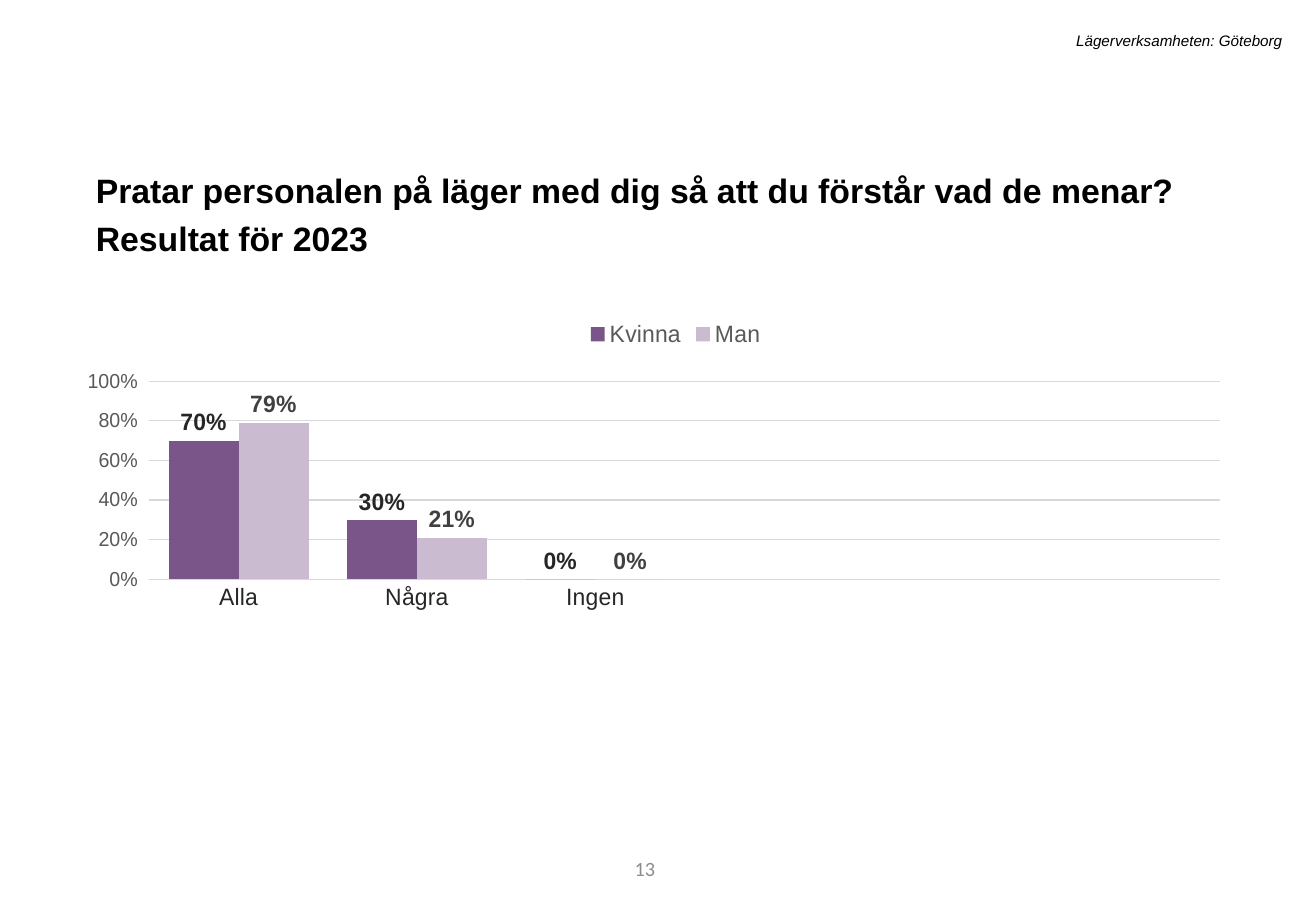
"""Build a survey result slide with a clustered column chart."""
from lxml.etree import SubElement
from pptx import Presentation
from pptx.chart.data import CategoryChartData
from pptx.dml.color import RGBColor
from pptx.enum.chart import XL_CHART_TYPE as CT, XL_LABEL_POSITION as LP
from pptx.enum.chart import XL_LEGEND_POSITION as LEG, XL_TICK_MARK as TM
from pptx.enum.text import MSO_ANCHOR as VA, PP_ALIGN as AL
from pptx.oxml.ns import qn
from pptx.util import Inches, Pt

BLACK = RGBColor(0x00, 0x00, 0x00)
INK = RGBColor(0x26, 0x26, 0x26)
CHARCOAL = RGBColor(0x40, 0x40, 0x40)
SLATE = RGBColor(0x59, 0x59, 0x59)
GREY = RGBColor(0x8C, 0x8C, 0x8C)
GRID = RGBColor(0xD9, 0xD9, 0xD9)
PURPLE = RGBColor(0x7A, 0x55, 0x89)
LILAC = RGBColor(0xCA, 0xBB, 0xD0)

TEXTS = [
    ("13", (28.16, 92.67, 22.53, 5.33),
     {"name": "Calibri", "size": Pt(12), "color": GREY},
     {"alignment": AL.RIGHT}, VA.MIDDLE),
    ("Pratar personalen på läger med dig så att du förstår vad de menar? "
     "Resultat för 2023", (6.37, 17.07, 86.8, 6.27),
     {"size": Pt(20), "bold": True},
     {"line_spacing": 1.2, "space_before": Pt(10)}, VA.TOP),
    ("Lägerverksamheten: Göteborg", (16.53, 2.8, 81.81, 3.33),
     {"size": Pt(9), "italic": True}, {"alignment": AL.RIGHT}, VA.TOP),
]
CATEGORIES = ["Alla", "Några", "Ingen", "", "", ""]
SERIES = [
    ("Kvinna", [0.7, 0.3, 0, None, None, None], PURPLE, INK),
    ("Man", [0.79, 0.21, 0, None, None, None], LILAC, CHARCOAL),
]
CHART_BOX = (6.65, 33.73, 86.8, 52.67)
PLOT_BOX = {"x": 2.5, "y": 15.4, "w": 96.6, "h": 41.3}


def apply(obj, values):
    """Set every attribute named in a dict."""
    for key, value in values.items():
        setattr(obj, key, value)


def set_font(font, color=BLACK, name="Arial", **values):
    """Format a font."""
    apply(font, {"name": name, **values})
    font.color.rgb = color


def place(prs, box):
    """Turn percentages of the slide into lengths."""
    sides = (prs.slide_width, prs.slide_height) * 2
    return [round(side * share / 100) for side, share in zip(sides, box)]


def add_text(prs, s, text, box, font, para, anchor):
    """Add a wrapped text box."""
    tf = s.shapes.add_textbox(*place(prs, box)).text_frame
    apply(tf, {"word_wrap": True, "vertical_anchor": anchor})
    p = tf.paragraphs[0]
    apply(p, para)
    r = p.add_run()
    r.text = text
    set_font(r.font, **font)


def set_plot_box(chart):
    """Fix the inner plot area as shares of the chart."""
    area = chart.plots[0]._element.getparent()
    for old in area.findall(qn("c:layout")):
        area.remove(old)
    layout = SubElement(area, qn("c:layout"))
    area.insert(0, layout)
    manual = SubElement(layout, qn("c:manualLayout"))
    values = {"layoutTarget": "inner", "xMode": "edge", "yMode": "edge",
              **{key: f"{share / 100:.3f}" for key, share in PLOT_BOX.items()}}
    for tag, value in values.items():
        SubElement(manual, qn(f"c:{tag}")).set("val", value)


def add_result_chart(prs, s):
    """Add the column chart of answers by gender."""
    data = CategoryChartData(number_format="0%")
    data.categories = CATEGORIES
    for name, values, *_ in SERIES:
        data.add_series(name, values)
    chart = s.shapes.add_chart(CT.COLUMN_CLUSTERED, *place(prs, CHART_BOX), data).chart
    apply(chart, {"has_title": False, "has_legend": True})
    set_font(chart.font, size=Pt(10))
    apply(chart.legend, {"position": LEG.TOP, "include_in_layout": False})
    set_font(chart.legend.font, SLATE, size=Pt(14))

    cat, val = chart.category_axis, chart.value_axis
    apply(cat, {"major_tick_mark": TM.NONE, "minor_tick_mark": TM.NONE})
    apply(val, {"minimum_scale": 0, "maximum_scale": 1, "major_unit": 0.2,
                "major_tick_mark": TM.OUTSIDE, "has_major_gridlines": True})
    set_font(cat.tick_labels.font, INK, size=Pt(14))
    set_font(val.tick_labels.font, SLATE, size=Pt(12))
    apply(val.tick_labels, {"number_format": "0%", "number_format_is_linked": False})
    for line in (cat.format.line, val.major_gridlines.format.line):
        line.color.rgb = GRID
        line.width = Pt(0.75)
    val.format.line.fill.background()

    plot = chart.plots[0]
    apply(plot, {"gap_width": 55, "overlap": 0, "vary_by_categories": False})
    for series, (*_, fill, ink) in zip(plot.series, SERIES):
        series.format.fill.solid()
        series.format.fill.fore_color.rgb = fill
        labels = series.data_labels
        apply(labels, {"show_value": True, "position": LP.OUTSIDE_END,
                       "number_format": "0%", "number_format_is_linked": False})
        set_font(labels.font, ink, size=Pt(14), bold=True)
    set_plot_box(chart)


def main():
    """Assemble and save the slide."""
    prs = Presentation()
    apply(prs, {"slide_width": Inches(10.83), "slide_height": Inches(7.5)})
    s = prs.slides.add_slide(prs.slide_layouts[6])
    add_result_chart(prs, s)
    for item in TEXTS:
        add_text(prs, s, *item)
    prs.save("out.pptx")


if __name__ == "__main__":
    main()
